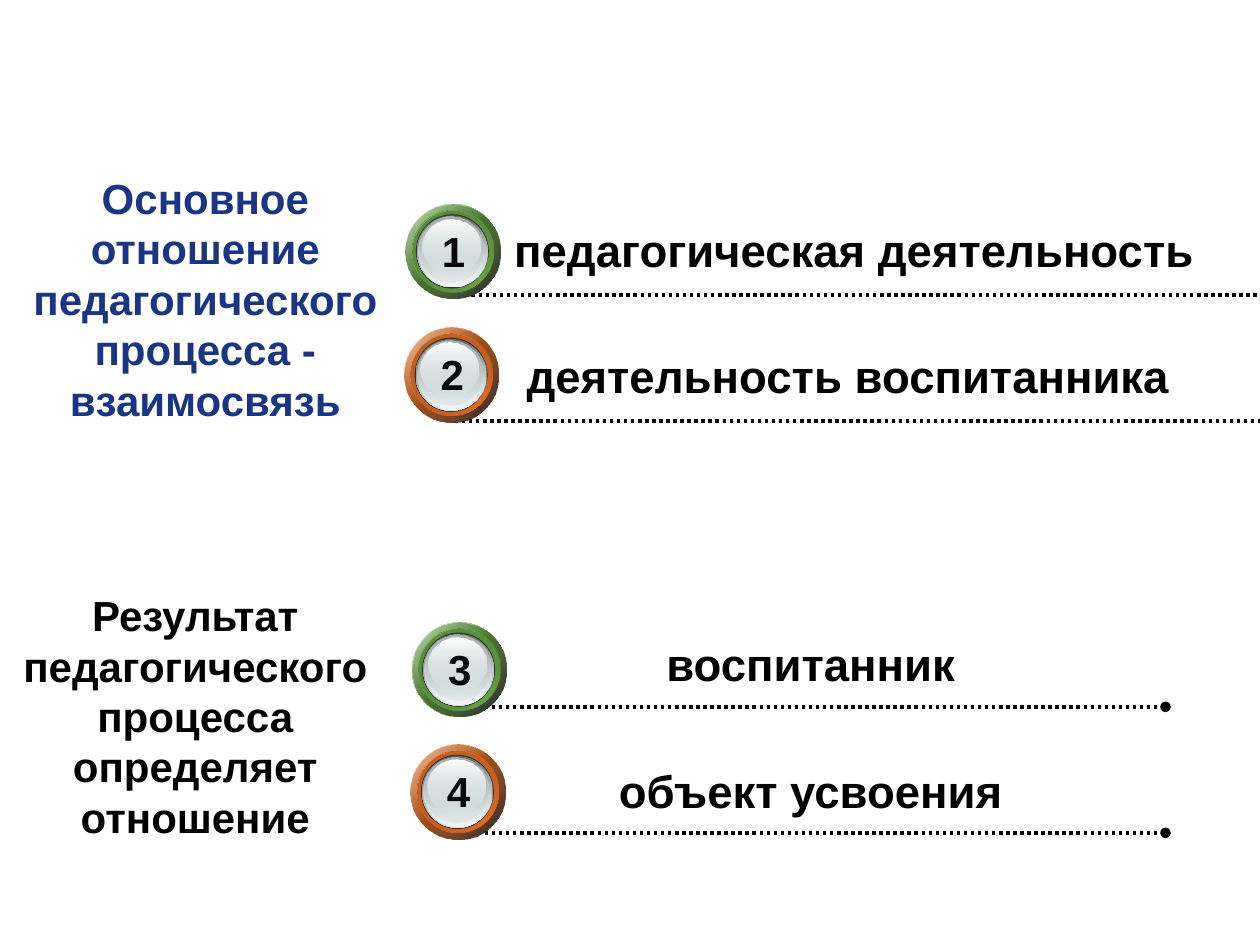
from dataclasses import dataclass
from typing import NamedTuple

from pptx import Presentation
from pptx.dml.color import RGBColor as Rgb
from pptx.enum.dml import MSO_LINE as Dash
from pptx.enum.shapes import MSO_CONNECTOR as Conn, MSO_SHAPE as Kind
from pptx.enum.text import MSO_ANCHOR as Anchor, PP_ALIGN as Align
from pptx.oxml import parse_xml
from pptx.oxml.ns import nsdecls, qn
from pptx.util import Inches, Pt


@dataclass(frozen=True)
class Theme:
    font: str = "Arial"
    label: int = 24
    item: int = 26
    rule: int = 2
    black: str = "000000"
    digit: str = "080808"
    blue: str = "193583"
    white: str = "FFFFFF"
    rim: str = "333333"
    silver: str = "D6E1E2"


class Tint(NamedTuple):
    base: str
    dark: str
    mid: str


class Stop(NamedTuple):
    pos: int
    color: str
    alpha: int = 100


class Layer(NamedTuple):
    box: tuple[float, float, float, float]
    stops: list[Stop]
    angle: int = 90


class Row(NamedTuple):
    num: str
    text: str
    tint: Tint
    ball: tuple[float, float]
    box: tuple[float, float, float, float]
    rule: tuple[float, float, float]  # start x, end x, y


class Label(NamedTuple):
    text: str
    left: float
    top: float
    color: str


THEME = Theme()
GREEN = Tint("66A444", "4E7E34", "548738")
ORANGE = Tint("E46C22", "AF531A", "BB591C")

ROWS = [
    Row("1", "педагогическая деятельность", GREEN, (3.22, 1.62),
        (3.97, 1.71, 5.62, 0.53), (3.63, 10.12, 2.34)),
    Row("2", "деятельность воспитанника", ORANGE, (3.21, 2.6),
        (3.92, 2.71, 5.62, 0.53), (3.61, 10.09, 3.34)),
    Row("3", "воспитанник", GREEN, (3.27, 4.94),
        (4.02, 5, 4.83, 0.53), (3.68, 9.25, 5.61)),
    Row("4", "объект усвоения", ORANGE, (3.26, 5.91),
        (4.02, 6.01, 4.83, 0.53), (3.68, 9.25, 6.61)),
]
LABELS = [
    Label("Основное отношение педагогического процесса - взаимосвязь",
          0.15, 1.15, THEME.blue),
    Label("Результат педагогического процесса определяет отношение",
          0.07, 4.46, THEME.black),
]


def layers(tint: Tint) -> list[Layer]:
    """Discs of one ball, back to front, placed from its top left corner."""
    ring, band = (0, 0, 0.75, 0.75), (0.05, 0.05, 0.65, 0.65)
    white, silver = THEME.white, THEME.silver
    return [
        Layer(ring, [Stop(0, white), Stop(50, tint.base), Stop(100, white)], 45),
        Layer(ring, [Stop(0, tint.base, 32), Stop(100, THEME.black, 90)], 45),
        Layer(band, [Stop(0, tint.dark), Stop(50, tint.base),
                     Stop(100, tint.dark)], 315),
        Layer(band, [Stop(0, tint.mid), Stop(100, tint.base, 0)], 45),
        Layer((0.08, 0.08, 0.58, 0.59), [Stop(0, THEME.rim)]),
        Layer((0.09, 0.09, 0.56, 0.57), [Stop(0, "636869"), Stop(100, silver)]),
        Layer((0.1, 0.1, 0.55, 0.55), [Stop(0, silver, 0), Stop(100, "F1F5F5")]),
        Layer((0.1, 0.1, 0.52, 0.52), [Stop(0, "AAB2B3"), Stop(100, silver, 48)]),
        Layer((0.13, 0.12, 0.46, 0.42), [Stop(0, white), Stop(100, silver, 38)]),
    ]


def paint(shape, stops: list[Stop], angle: int = 90) -> None:
    """Fill a shape with one colour or a linear gradient, without outline."""
    shape.shadow.inherit = False
    shape.line.fill.background()
    if len(stops) == 1:
        shape.fill.solid()
        shape.fill.fore_color.rgb = Rgb.from_string(stops[0].color)
        return
    shape.fill.background()
    marks = "".join(
        f'<a:gs pos="{s.pos * 1000}"><a:srgbClr val="{s.color}">'
        f'<a:alpha val="{s.alpha * 1000}"/></a:srgbClr></a:gs>' for s in stops)
    grad = parse_xml(
        f'<a:gradFill {nsdecls("a")} rotWithShape="1"><a:gsLst>{marks}</a:gsLst>'
        f'<a:lin ang="{angle * 60000}" scaled="0"/></a:gradFill>')
    props = shape._element.spPr
    props.replace(props.find(qn("a:noFill")), grad)


def write(shape, text: str, size: int, color: str,
          anchor: Anchor = Anchor.TOP) -> None:
    frame = shape.text_frame
    frame.word_wrap = True
    frame.vertical_anchor = anchor
    para = frame.paragraphs[0]
    para.alignment = Align.CENTER
    run = para.add_run()
    run.text = text
    style = {"name": THEME.font, "size": Pt(size), "bold": True}
    for key, value in style.items():
        setattr(run.font, key, value)
    run.font.color.rgb = Rgb.from_string(color)


def draw_rule(shapes, start: float, end: float, y: float) -> None:
    rule = shapes.add_connector(
        Conn.STRAIGHT, Inches(start), Inches(y), Inches(end), Inches(y))
    rule.line.color.rgb = Rgb.from_string(THEME.black)
    style = {"width": Pt(THEME.rule), "dash_style": Dash.ROUND_DOT}
    for key, value in style.items():
        setattr(rule.line, key, value)
    props = rule._element.spPr
    props.find(qn("a:ln")).append(
        parse_xml(f'<a:tailEnd {nsdecls("a")} type="oval"/>'))
    props.append(parse_xml(f'<a:effectLst {nsdecls("a")}/>'))


def draw_ball(shapes, left: float, top: float, tint: Tint) -> None:
    group = shapes.add_group_shape()
    for layer in layers(tint):
        x, y, wide, high = layer.box
        disc = group.shapes.add_shape(
            Kind.OVAL, Inches(left + x), Inches(top + y),
            Inches(wide), Inches(high))
        paint(disc, layer.stops, layer.angle)


def draw_row(shapes, row: Row) -> None:
    left, top = row.ball
    draw_rule(shapes, *row.rule)
    draw_ball(shapes, left, top, row.tint)
    num = shapes.add_textbox(
        Inches(left + 0.17), Inches(top + 0.12), Inches(0.42), Inches(0.5))
    write(num, row.num, THEME.label, THEME.digit)
    item = shapes.add_textbox(*map(Inches, row.box))
    write(item, row.text, THEME.item, THEME.black)


def draw_label(shapes, label: Label) -> None:
    panel = shapes.add_shape(
        Kind.RECTANGLE, Inches(label.left), Inches(label.top),
        Inches(2.96), Inches(2.44))
    paint(panel, [Stop(0, THEME.white)])
    write(panel, label.text, THEME.label, label.color, Anchor.MIDDLE)


def main() -> None:
    deck = Presentation()
    deck.slide_width, deck.slide_height = Inches(10), Inches(7.5)
    shapes = deck.slides.add_slide(deck.slide_layouts[6]).shapes

    # Numbered rows on dotted rules
    for row in ROWS:
        draw_row(shapes, row)

    # Captions at the left
    for label in LABELS:
        draw_label(shapes, label)

    deck.save("out.pptx")


if __name__ == "__main__":
    main()
